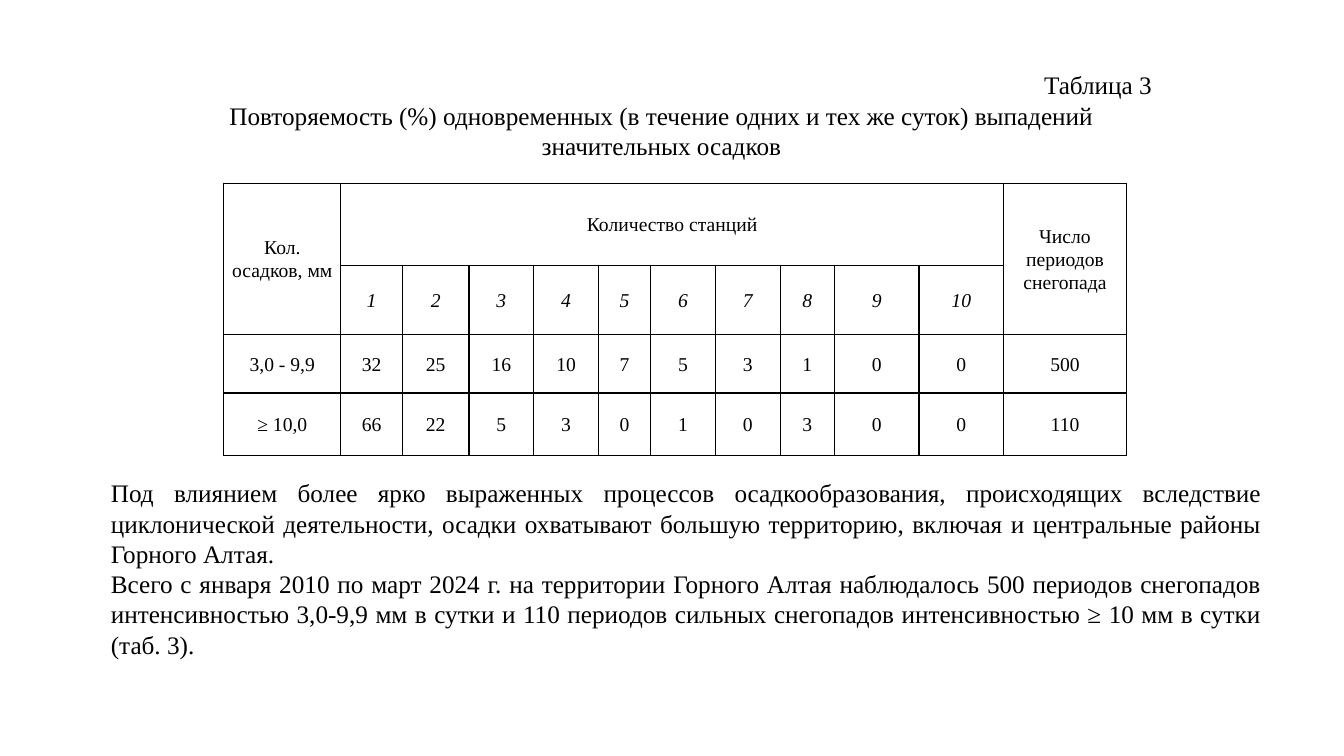
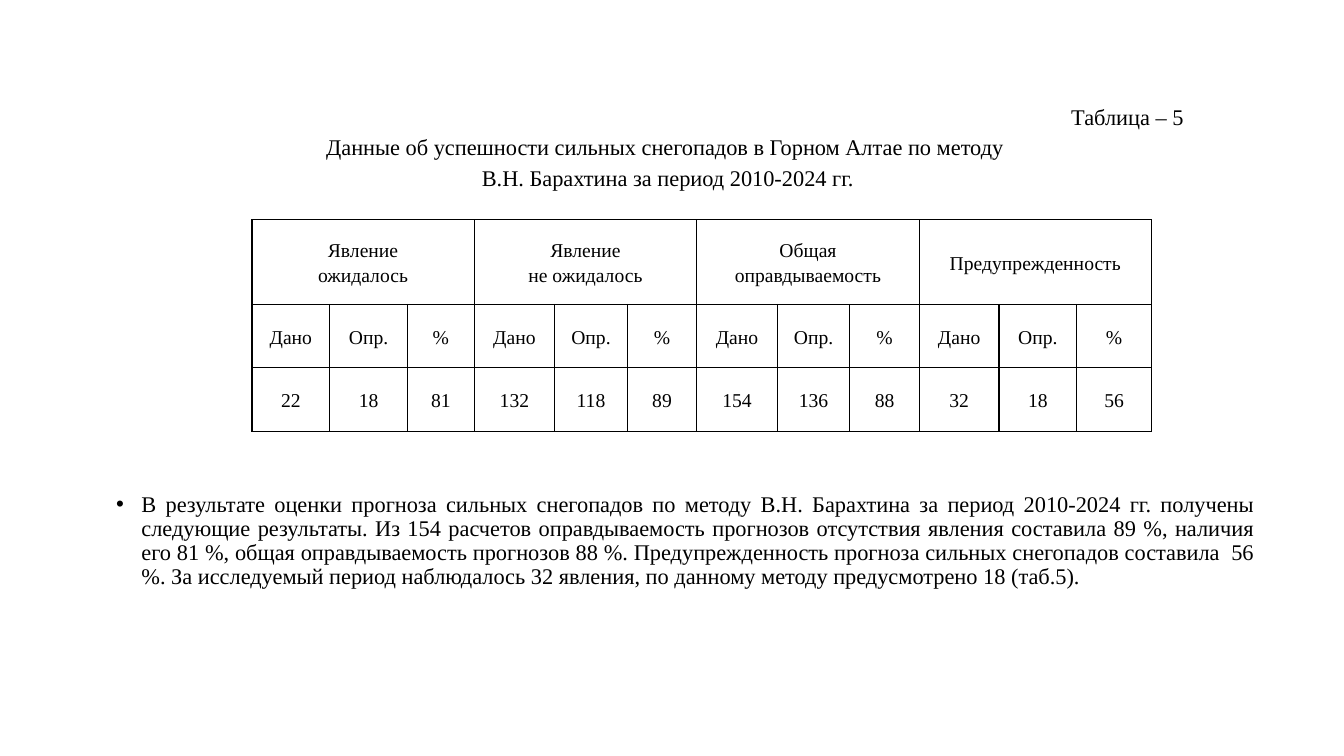
from lxml import etree
from pptx import Presentation
from pptx.dml.color import RGBColor
from pptx.enum.text import MSO_ANCHOR, MSO_AUTO_SIZE, PP_ALIGN
from pptx.oxml.ns import qn
from pptx.util import Cm, Pt

LEFT, MID, RIGHT, JUST = (PP_ALIGN.LEFT, PP_ALIGN.CENTER,
                          PP_ALIGN.RIGHT, PP_ALIGN.JUSTIFY)
TOP, MIDDLE = MSO_ANCHOR.TOP, MSO_ANCHOR.MIDDLE
NO_FIT = MSO_AUTO_SIZE.NONE

FONT = "Times New Roman"
BLACK = RGBColor(0, 0, 0)
WHITE = RGBColor(255, 255, 255)
CELL_SIZE = 14
LAYOUT = 1  # title and content


def style(para, size, align, line=1.0, before=0, after=0, italic=False):
    """Format one paragraph and its runs."""
    para.alignment = align
    para.line_spacing = line
    para.space_before, para.space_after = Pt(before), Pt(after)
    for run in para.runs:
        font = run.font
        font.name, font.size, font.italic = FONT, Pt(size), italic
        font.color.rgb = BLACK


def indent(para, left, first, bullet=False):
    """Set the indents and, if wanted, keep the bullet."""
    props = para._p.get_or_add_pPr()
    props.set("marL", str(Cm(left)))
    props.set("indent", str(Cm(first)))
    if not bullet:
        etree.SubElement(props, qn("a:buNone"))


def fill_box(shape, box, text):
    """Place a placeholder and return its paragraphs."""
    shape.left, shape.top, shape.width, shape.height = map(Cm, box)
    frame = shape.text_frame
    frame.text = text
    frame.word_wrap = True
    frame.auto_size = NO_FIT
    frame.vertical_anchor = TOP
    return frame.paragraphs


def add_title(slide, box, text, size, line=1.0, first=0):
    """Table number on the right, then the centred table name."""
    for i, para in enumerate(fill_box(slide.shapes.title, box, text)):
        style(para, size, MID if i else RIGHT, line)
        indent(para, 0, first)


def add_body(slide, box, text, size, line=1.0, before=0, bullet=False):
    hang = 0.64 if bullet else 0
    for para in fill_box(slide.placeholders[1], box, text):
        style(para, size, JUST, line, before)
        indent(para, hang, -hang, bullet)


def add_border(cell):
    props = cell._tc.get_or_add_tcPr()
    for side in ("a:lnL", "a:lnR", "a:lnT", "a:lnB"):
        edge = etree.SubElement(props, qn(side), w=str(Pt(1)))
        paint = etree.SubElement(edge, qn("a:solidFill"))
        etree.SubElement(paint, qn("a:srgbClr"), val=str(BLACK))


def add_grid(slide, left, top, widths, heights, rows, spans,
             line, after=0, slant=None):
    """Add a bordered table; slant is the index of an italic row."""
    table = slide.shapes.add_table(
        len(heights), len(widths), Cm(left), Cm(top),
        Cm(sum(widths)), Cm(sum(heights))).table
    table.first_row = table.horz_banding = False
    for col, width in zip(table.columns, widths):
        col.width = Cm(width)
    for row, height in zip(table.rows, heights):
        row.height = Cm(height)
    for r, texts in enumerate(rows):
        for c, text in enumerate(texts):
            cell = table.cell(r, c)
            add_border(cell)
            cell.fill.solid()
            cell.fill.fore_color.rgb = WHITE
            cell.vertical_anchor = MIDDLE
            cell.margin_left = cell.margin_right = Cm(0.18)
            cell.margin_top = cell.margin_bottom = 0
            cell.text_frame.text = text
            for para in cell.text_frame.paragraphs:
                style(para, CELL_SIZE, MID, line, after=after,
                      italic=r == slant)
    for r, c, end_r, end_c in spans:
        table.cell(r, c).merge(table.cell(end_r, end_c))


def add_rain(slide):
    """Snowfall frequency by number of stations."""
    add_title(slide, (4.06, 1.63, 25.22, 2.57),
              "Таблица 3\nПовторяемость (%) одновременных (в течение одних "
              "и тех же суток) выпадений значительных осадков", 18)
    rows = [
        ["Кол. осадков, мм", "Количество станций", *[""] * 9,
         "Число периодов снегопада"],
        ["", *map(str, range(1, 11)), ""],
        ["3,0 - 9,9", *"32 25 16 10 7 5 3 1 0 0 500".split()],
        ["≥ 10,0", *"66 22 5 3 0 1 0 3 0 0 110".split()],
    ]
    widths = [2.95, 1.55, 1.68, 1.63, 1.63, 1.32,
              1.63, 1.63, 1.37, 2.13, 2.13, 3.1]
    spans = [(0, 0, 1, 0), (0, 1, 0, 10), (0, 11, 1, 11)]
    add_grid(slide, 5.64, 4.62, widths, [2.06, 1.75, 1.47, 1.57],
             rows, spans, 1.07, after=8, slant=1)
    add_body(slide, (2.54, 11.91, 29.51, 4.88),
             "Под влиянием более ярко выраженных процессов "
             "осадкообразования, происходящих вследствие циклонической "
             "деятельности, осадки охватывают большую территорию, включая "
             "и центральные районы Горного Алтая.\n"
             "Всего с января 2010 по март 2024 г. на территории Горного "
             "Алтая наблюдалось 500 периодов снегопадов интенсивностью "
             "3,0-9,9 мм в сутки и 110 периодов сильных снегопадов "
             "интенсивностью ≥ 10 мм в сутки (таб. 3).", 18)


def add_score(slide):
    """Success of the heavy snowfall forecasts."""
    add_title(slide, (2.34, 2.36, 27.74, 2.57),
              "Таблица – 5\nДанные об успешности сильных снегопадов в "
              "Горном Алтае по методу \n"
              "В.Н. Барахтина за период 2010-2024 гг.", 16, 1.15, 1.24)
    heads = ["Явление\nожидалось", "Явление\nне ожидалось",
             "Общая\nоправдываемость", "Предупрежденность"]
    rows = [
        [text for head in heads for text in (head, "", "")],
        ["Дано", "Опр.", "%"] * len(heads),
        "22 18 81 132 118 89 154 136 88 32 18 56".split(),
    ]
    widths = [1.96, 1.96, 1.68, *[2.03, 1.83, 1.75] * 2, 2.01, 1.96, 1.88]
    spans = [(0, c, 0, c + 2) for c in range(0, len(widths), 3)]
    add_grid(slide, 6.35, 5.54, widths, [2.13, 1.6, 1.6], rows, spans, 1.15)
    add_body(slide, (2.67, 12.29, 29.21, 3.63),
             "В результате оценки прогноза сильных снегопадов по методу "
             "В.Н. Барахтина за период 2010-2024 гг. получены следующие "
             "результаты. Из 154 расчетов оправдываемость прогнозов "
             "отсутствия явления составила 89 %, наличия его 81 %, общая "
             "оправдываемость прогнозов 88 %. Предупрежденность прогноза "
             "сильных снегопадов составила  56 %. За исследуемый период "
             "наблюдалось 32 явления, по данному методу предусмотрено 18 "
             "(таб.5).", 16, 0.9, 10, bullet=True)


def main():
    deck = Presentation()
    deck.slide_width, deck.slide_height = Cm(33.87), Cm(19.05)
    for build in (add_rain, add_score):
        build(deck.slides.add_slide(deck.slide_layouts[LAYOUT]))
    deck.save("out.pptx")


if __name__ == "__main__":
    main()
